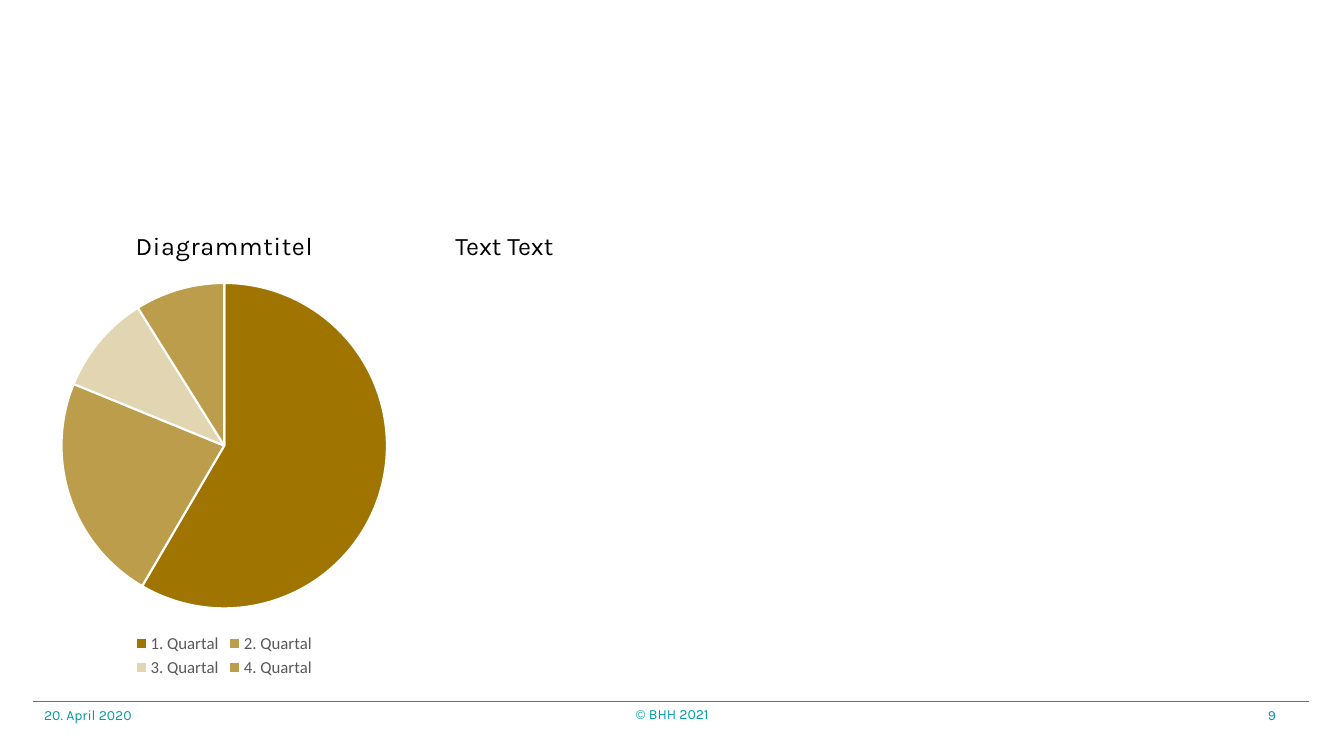
from lxml.etree import SubElement
from pptx import Presentation
from pptx.chart.data import CategoryChartData
from pptx.dml.color import RGBColor as RGB
from pptx.enum.chart import XL_CHART_TYPE as CT, XL_LEGEND_POSITION as LP
from pptx.enum.text import PP_ALIGN as AL
from pptx.oxml.ns import qn
from pptx.util import Pt

COLORS = {"teal": "009CA6", "gold": "A07400", "black": "000000",
          "grey": "595959", "white": "FFFFFF"}
QUARTERS = [("1. Quartal", 59, 100), ("2. Quartal", 23, 70),
            ("3. Quartal", 10, 30), ("4. Quartal", 9, 70)]
TITLE = "Diagrammtitel"
LEFT, TOP, HEIGHT, RULE_Y = 24.5, 149.8, 337, 501.1
BODY = {"size": 18, "name": "Karla", "color": "black"}
FOOT = {"size": 10, "name": "Karla", "color": "teal"}
LEGEND = {"size": 12, "name": "Calibri", "color": "grey"}
TEXTS = [
    ("Text Text", (318.2, TOP, 617.8, HEIGHT), BODY, {"line_spacing": 1.5}),
    ("20. April 2020", (LEFT, RULE_Y, 216, 28.8), FOOT, {}),
    ("© BHH 2021", (318.2, 500.4, 324, 28.8), FOOT, {"alignment": AL.CENTER}),
    ("9", (898.6, RULE_Y, 37.4, 28.8), FOOT, {}),
]


def rgb(name):
    """Return the named colour."""
    return RGB.from_string(COLORS[name])


def set_font(font, fmt):
    """Apply font format values."""
    for key, value in fmt.items():
        if key == "color":
            font.color.rgb = rgb(value)
        else:
            setattr(font, key, Pt(value) if key == "size" else value)


def add_text(s, text, box, fmt, para):
    """Add one text box."""
    tf = s.shapes.add_textbox(*map(Pt, box)).text_frame
    tf.word_wrap = True
    p = tf.paragraphs[0]
    for key, value in para.items():
        setattr(p, key, value)
    r = p.add_run()
    r.text = text
    set_font(r.font, fmt)


def add_rule(s):
    """Add the footer rule."""
    line = s.shapes.add_connector(1, Pt(23.8), Pt(RULE_Y), Pt(935.3), Pt(RULE_Y))
    line.line.color.rgb = rgb("teal")
    line.line.width = Pt(0.25)
    SubElement(line._element.spPr, qn("a:effectLst"))


def add_pie(s):
    """Add the pie chart of quarters."""
    data = CategoryChartData()
    data.categories = [name for name, _, _ in QUARTERS]
    data.add_series("Series 1", [value for _, value, _ in QUARTERS])
    box = map(Pt, (LEFT, TOP, 271.4, HEIGHT))
    chart = s.shapes.add_chart(CT.PIE, *box, data).chart
    set_font(chart.font, {"size": 10, "name": "Calibri", "color": "black"})
    chart.has_title = True
    p = chart.chart_title.text_frame.paragraphs[0]
    r = p.add_run()
    r.text = TITLE
    set_font(r.font, {**BODY, "bold": False})
    r.font._element.set("spc", "50")
    chart.has_legend = True
    chart.legend.position = LP.BOTTOM
    chart.legend.include_in_layout = False
    set_font(chart.legend.font, LEGEND)
    plot = chart.plots[0]
    plot.vary_by_categories = True
    for i, (_, _, opacity) in enumerate(QUARTERS):
        fmt = plot.series[0].points[i].format
        fmt.fill.solid()
        fmt.fill.fore_color.rgb = rgb("gold")
        fmt.line.color.rgb = rgb("white")
        fmt.line.width = Pt(1.5)
        if opacity < 100:
            color = fmt.fill._xPr.find(".//" + qn("a:srgbClr"))
            SubElement(color, qn("a:alpha"), val=str(opacity * 1000))


def main():
    """Build and save the slide."""
    prs = Presentation()
    prs.slide_width, prs.slide_height = Pt(960), Pt(540)
    s = prs.slides.add_slide(prs.slide_layouts[6])
    add_rule(s)
    for item in TEXTS:
        add_text(s, *item)
    add_pie(s)
    prs.save("out.pptx")


if __name__ == "__main__":
    main()
